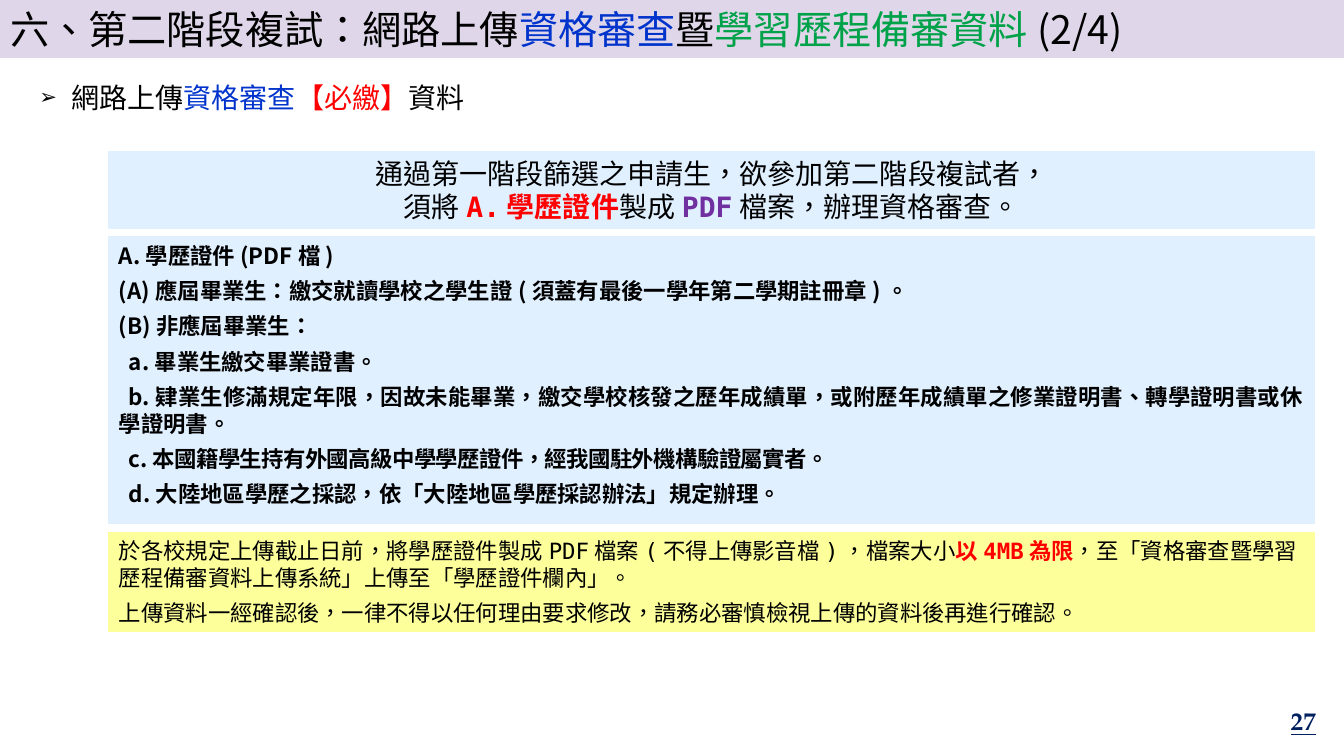
import pptx
import pptx.dml.color
import pptx.enum.lang
import pptx.enum.shapes
import pptx.enum.text
import pptx.oxml.ns
import pptx.util
from lxml import etree
from pptx.util import Inches

ALIGN = pptx.enum.text.PP_ALIGN
ANCHOR = pptx.enum.text.MSO_ANCHOR
BLACK, BLUE, RED, GREEN, PURPLE = "000000", "0033CC", "FF0000", "00A249", "7030A0"
NAVY, LILAC, PALE_BLUE, YELLOW = "002060", "DFD7E9", "E1F0FF", "FDFF9B"
SANS, SANS_BOLD, MONO, SERIF = (
    "Noto Sans CJK JP", "Noto Sans CJK SC", "DejaVu Sans Mono", "TeX Gyre Pagella")
PANEL_LEFT, PANEL_WIDTH = 1.08, 11.96


def color(hex_string):
    return pptx.dml.color.RGBColor.from_string(hex_string)


def add_element(parent, tag, **attributes):
    return etree.SubElement(parent, pptx.oxml.ns.qn(tag), **attributes)


def place(shape, left, top, width, height):
    shape.left, shape.top = Inches(left), Inches(top)
    shape.width, shape.height = Inches(width), Inches(height)


def paint(shape, fill, line_width):
    shape.fill.solid()
    shape.fill.fore_color.rgb = color(fill)
    shape.line.color.rgb = color(fill)
    shape.line.width = pptx.util.Pt(line_width)


def set_frame(shape, anchor, wrap=True):
    frame = shape.text_frame
    frame.auto_size = pptx.enum.text.MSO_AUTO_SIZE.NONE
    frame.vertical_anchor = anchor
    frame.word_wrap = wrap
    return frame


def write(paragraph, runs, size, font_name, align=ALIGN.LEFT, bold=False,
          text_color=BLACK, before=0, after=0):
    """Fill a paragraph; each run is (text, colour or None, bold or None)."""
    paragraph.alignment = align
    paragraph.line_spacing = 1.0
    paragraph.space_before = pptx.util.Pt(before)
    paragraph.space_after = pptx.util.Pt(after)
    font = paragraph.font
    font.size, font.name, font.bold = pptx.util.Pt(size), font_name, bold
    font.color.rgb = color(text_color)
    defaults = paragraph._p.pPr.find(pptx.oxml.ns.qn("a:defRPr"))
    add_element(defaults, "a:ea", typeface=font_name)
    for text, run_color, run_bold in runs:
        run = paragraph.add_run()
        run.text = text
        run.font.language_id = pptx.enum.lang.MSO_LANGUAGE_ID.TRADITIONAL_CHINESE
        if run_color:
            run.font.color.rgb = color(run_color)
        if run_bold is not None:
            run.font.bold = run_bold


def plain(text):
    return [(text, None, None)]


def next_paragraph(frame, index):
    return frame.add_paragraph() if index else frame.paragraphs[0]


def add_panel(slide, top, height, fill):
    panel = slide.shapes.add_shape(
        pptx.enum.shapes.MSO_SHAPE.RECTANGLE, Inches(PANEL_LEFT), Inches(top),
        Inches(PANEL_WIDTH), Inches(height))
    panel.shadow.inherit = False
    paint(panel, fill, 0.75)
    return set_frame(panel, ANCHOR.TOP)


def add_title(slide, left, top, width, height):
    title = slide.shapes.title
    place(title, left, top, width, height)
    paint(title, LILAC, 1)
    frame = set_frame(title, ANCHOR.MIDDLE)
    write(frame.paragraphs[0], [
        ("六、第二階段複試：網路上傳", None, None), ("資格審查", BLUE, None),
        ("暨", None, None), ("學習歷程備審資料", GREEN, None),
        ("(2/4)", None, None)], 28, SANS)


def add_subtitle(slide, left, top, width, height):
    body = slide.placeholders[1]
    place(body, left, top, width, height)
    paragraph = set_frame(body, ANCHOR.TOP, wrap=False).paragraphs[0]
    properties = paragraph._p.get_or_add_pPr()
    properties.set("marL", str(Inches(0.31)))
    properties.set("indent", str(Inches(-0.31)))
    add_element(properties, "a:buFont", typeface=MONO)
    add_element(properties, "a:buChar", char="➢")
    write(paragraph, [
        ("網路上傳", None, None), ("資格審查", BLUE, None),
        ("【必繳】", RED, None), ("資料", None, None)], 20, SANS)


def add_summary(slide, top, height):
    frame = add_panel(slide, top, height, PALE_BLUE)
    lines = [
        plain("通過第一階段篩選之申請生，欲參加第二階段複試者，"),
        [("須將", None, None), ("A.學歷證件", RED, True), ("製成", None, None),
         ("PDF", PURPLE, True), ("檔案，辦理資格審查。", None, None)]]
    for index, runs in enumerate(lines):
        write(next_paragraph(frame, index), runs, 20, MONO, ALIGN.CENTER)


def add_requirements(slide, top, height):
    frame = add_panel(slide, top, height, PALE_BLUE)
    # text, first-line indent, alignment, letter spacing in hundredths of a point
    lines = [
        ("A.學歷證件(PDF檔)", 0, ALIGN.LEFT, 0),
        ("(A)應屆畢業生：繳交就讀學校之學生證(須蓋有最後一學年第二學期註冊章)。",
         0, ALIGN.JUSTIFY, 0),
        ("(B)非應屆畢業生：", 0, ALIGN.LEFT, 0),
        ("a.畢業生繳交畢業證書。", 0.1, ALIGN.LEFT, 0),
        ("b.肄業生修滿規定年限，因故未能畢業，繳交學校核發之歷年成績單，"
         "或附歷年成績單之修業證明書、轉學證明書或休學證明書。",
         0.1, ALIGN.JUSTIFY, 0),
        ("c.本國籍學生持有外國高級中學學歷證件，經我國駐外機構驗證屬實者。",
         0.1, ALIGN.LEFT, -40),
        ("d.大陸地區學歷之採認，依「大陸地區學歷採認辦法」規定辦理。",
         0.1, ALIGN.LEFT, 0)]
    for index, (text, indent, align, spacing) in enumerate(lines):
        paragraph = next_paragraph(frame, index)
        properties = paragraph._p.get_or_add_pPr()
        properties.set("marL", "0")
        properties.set("indent", str(Inches(indent)))
        write(paragraph, plain(text), 16, SANS_BOLD, align, bold=True,
              before=3 if index else 0, after=3)
        if spacing:
            paragraph.runs[0]._r.get_or_add_rPr().set("spc", str(spacing))


def add_upload_notice(slide, top, height):
    frame = add_panel(slide, top, height, YELLOW)
    lines = [
        [("於各校規定上傳截止日前，將學歷證件製成PDF檔案(不得上傳影音檔)，檔案大小",
          None, None),
         ("以4MB為限", RED, True),
         ("，至「資格審查暨學習歷程備審資料上傳系統」上傳至「學歷證件欄內」。",
          None, None)],
        plain("上傳資料一經確認後，一律不得以任何理由要求修改，"
              "請務必審慎檢視上傳的資料後再進行確認。")]
    for index, runs in enumerate(lines):
        write(next_paragraph(frame, index), runs, 16, MONO,
              before=3 if index else 0, after=3)


def add_page_number(slide, left, top, width, height):
    box = slide.shapes.add_textbox(
        Inches(left), Inches(top), Inches(width), Inches(height))
    paragraph = set_frame(box, ANCHOR.MIDDLE).paragraphs[0]
    write(paragraph, plain("27"), 18, SERIF, ALIGN.RIGHT, True, NAVY)
    paragraph.font.underline = True


def main():
    presentation = pptx.Presentation()
    presentation.slide_width = Inches(13.33)
    presentation.slide_height = Inches(7.5)
    slide = presentation.slides.add_slide(presentation.slide_layouts[1])
    add_title(slide, 0, 0, 13.33, 0.57)
    add_subtitle(slide, 0.3, 0.75, 4.44, 0.44)
    add_summary(slide, 1.5, 0.77)
    add_requirements(slide, 2.35, 2.84)
    add_upload_notice(slide, 5.28, 0.99)
    add_page_number(slide, 10.15, 6.95, 3, 0.4)
    presentation.save("out.pptx")


if __name__ == "__main__":
    main()
